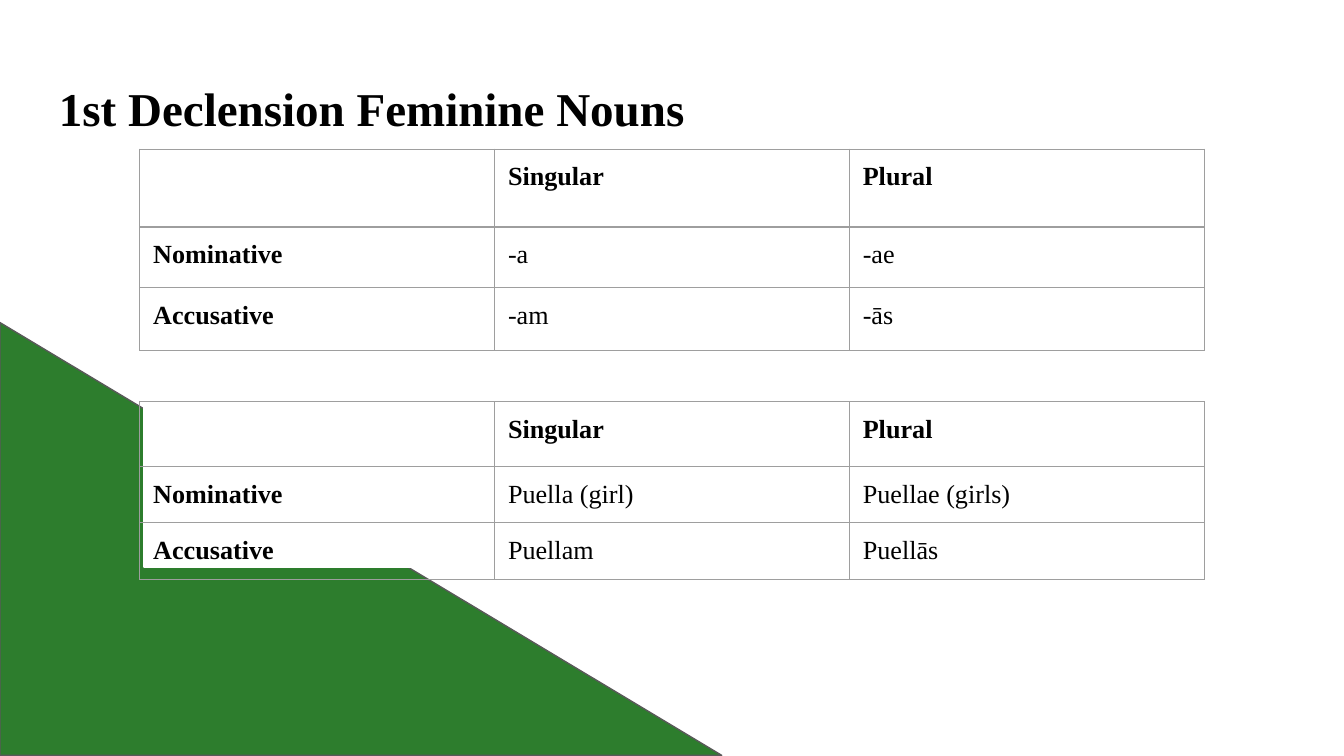
from lxml.etree import SubElement
from pptx import Presentation
from pptx.dml.color import RGBColor
from pptx.enum.shapes import MSO_SHAPE
from pptx.enum.text import MSO_ANCHOR
from pptx.oxml.ns import qn
from pptx.util import Inches, Pt

GREEN = RGBColor(0x2D, 0x7D, 0x2D)
GREY = RGBColor(0x59, 0x59, 0x59)
RULE = RGBColor(0x9E, 0x9E, 0x9E)
WHITE = RGBColor(0xFF, 0xFF, 0xFF)
BLACK = RGBColor(0, 0, 0)


def write(frame, text, size=14, bold=False):
    run = frame.paragraphs[0].add_run()
    run.text = text
    run.font.name = "Times New Roman"
    run.font.size = Pt(size)
    run.font.bold = bold
    run.font.color.rgb = BLACK


def border(cell):
    props = cell._tc.get_or_add_tcPr()
    for side in ("lnL", "lnR", "lnT", "lnB"):
        line = SubElement(props, qn(f"a:{side}"), w=str(Pt(0.75)))
        fill = SubElement(line, qn("a:solidFill"))
        SubElement(fill, qn("a:srgbClr"), val=str(RULE))


# Widescreen page, 16 to 9
deck = Presentation()
deck.slide_width = Inches(10)
deck.slide_height = Inches(10 * 9 / 16)
slide = deck.slides.add_slide(deck.slide_layouts[6])

# Green corner and the white panel over it
for kind, box, fill, edge in (
    (MSO_SHAPE.RIGHT_TRIANGLE, (0, 2.4, 5.37, 3.22), GREEN, GREY),
    (MSO_SHAPE.RECTANGLE, (1.07, 3, 7.92, 1.22), WHITE, WHITE),
):
    shape = slide.shapes.add_shape(kind, *map(Inches, box))
    shape.shadow.inherit = False
    shape.fill.solid()
    shape.fill.fore_color.rgb = fill
    shape.line.color.rgb = edge
    shape.line.width = Pt(0.75)

# Title
title = slide.shapes.add_textbox(*map(Inches, (0.34, 0.49, 9.32, 0.63)))
frame = title.text_frame
frame.word_wrap = True
frame.vertical_anchor = MSO_ANCHOR.BOTTOM
frame.margin_left = frame.margin_right = Inches(0.1)
frame.margin_top = Inches(0.1)
frame.margin_bottom = Inches(0.11)
write(frame, "1st Declension Feminine Nouns", size=25.2, bold=True)

# Tables: endings, then an example noun
HEAD = ("", "Singular", "Plural")
for top, highs, forms in (
    (1.11, (0.58, 0.45, 0.47), (("-a", "-ae"), ("-am", "-ās"))),
    (2.99, (0.48, 0.42, 0.42),
     (("Puella (girl)", "Puellae (girls)"), ("Puellam", "Puellās"))),
):
    rows = (HEAD, ("Nominative", *forms[0]), ("Accusative", *forms[1]))
    table = slide.shapes.add_table(
        3, 3, Inches(1.04), Inches(top), Inches(7.92), Inches(sum(highs))
    ).table
    for col in table.columns:
        col.width = Inches(2.64)
    for r, (high, row) in enumerate(zip(highs, rows)):
        table.rows[r].height = Inches(high)
        for c, text in enumerate(row):
            cell = table.cell(r, c)
            border(cell)
            cell.fill.background()
            if text:
                cell.margin_left = cell.margin_right = Inches(0.1)
                cell.margin_top = Inches(0.1)
                cell.margin_bottom = Inches(0.08)
                write(cell.text_frame, text, bold=r == 0 or c == 0)

deck.save("out.pptx")
